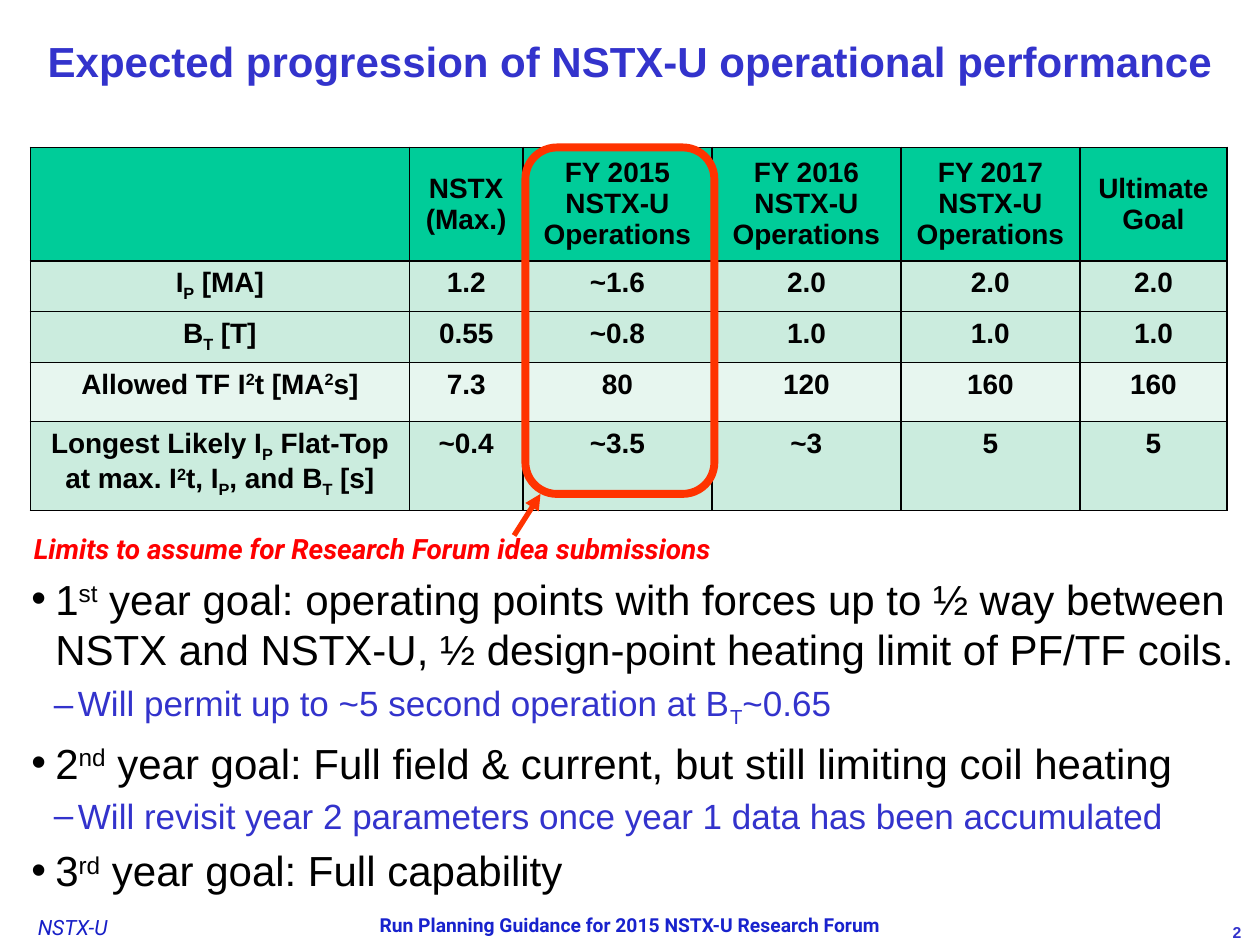
"""Build the slide on expected NSTX-U operational performance."""
from lxml import etree
from pptx import Presentation
from pptx import util as u
from pptx.dml.color import RGBColor
from pptx.enum import shapes, text
from pptx.oxml.ns import qn

COLORS = {
    "black": "000000", "blue": "3333CC", "footer": "171FC7", "running": "1822CD",
    "red": "FF0000", "mark": "FF3300", "header": "00CC99", "band": "CBECDE", "pale": "E7F6EF",
}
SHIFTS = {"^": "30000", "_": "-25000"}
CENTER, RIGHT = text.PP_ALIGN.CENTER, text.PP_ALIGN.RIGHT
MIDDLE, TOP = text.MSO_ANCHOR.MIDDLE, text.MSO_ANCHOR.TOP

TITLE = "Expected progression of NSTX-U operational performance"
COLUMN_WIDTHS = [3.01, 0.9, 1.5, 1.5, 1.42, 1.17]
ROW_HEIGHTS = [0.9, 0.37, 0.37, 0.47, 0.63]
ROW_FILLS = ["header", "band", "band", "pale", "band"]
ROWS = [
    ["", "NSTX\n(Max.)", "FY 2015 NSTX-U\nOperations", "FY 2016\nNSTX-U\nOperations",
     "FY 2017\nNSTX-U Operations", "Ultimate Goal"],
    ["I|_P| [MA]", "1.2", "~1.6", "2.0", "2.0", "2.0"],
    ["B|_T| [T]", "0.55", "~0.8", "1.0", "1.0", "1.0"],
    ["Allowed TF I|^2|t [MA|^2|s]", "7.3", "80", "120", "160", "160"],
    ["Longest Likely I|_P| Flat-Top at max. I|^2|t, I|_P|, and B|_T| [s]",
     "~0.4", "~3.5", "~3", "5", "5"],
]
GOALS = [
    (0, "1|^st| year goal: operating points with forces up to ½ way between NSTX and "
        "NSTX-U, ½ design-point heating limit of PF/TF coils."),
    (1, "Will permit up to ~5 second operation at B|_T|~0.65"),
    (0, "2|^nd| year goal: Full field & current, but still limiting coil heating"),
    (1, "Will revisit year 2 parameters once year 1 data has been accumulated"),
    (0, "3|^rd| year goal: Full capability"),
]
GOAL_LEVELS = [
    {"bullet": "•", "indent": 0.19, "size": 24, "color": "black"},
    {"bullet": "–", "indent": 0.37, "size": 20, "color": "blue"},
]
HANGING = 0.19
LIMITS = "Limits to assume for Research Forum idea submissions"


def rgb(name):
    return RGBColor.from_string(COLORS[name])


def write(paragraph, content, size=16, font="Arial", color="black", bold=False,
          italic=False, align=None, spacing=None):
    """Write text whose |^x| and |_x| parts are raised and lowered."""
    paragraph.alignment = align
    paragraph.line_spacing = spacing
    for part in filter(None, content.split("|")):
        run = paragraph.add_run()
        run.text = part.lstrip("^_")
        run.font.size, run.font.name = u.Pt(size), font
        run.font.bold, run.font.italic = bold, italic
        run.font.color.rgb = rgb(color)
        if part[0] in SHIFTS:
            run._r.get_or_add_rPr().set("baseline", SHIFTS[part[0]])


def add_box(slide, place, inset=None, anchor=TOP, wrap=True):
    frame = slide.shapes.add_textbox(*map(u.Inches, place)).text_frame
    frame.word_wrap, frame.vertical_anchor = wrap, anchor
    if inset is not None:
        frame.margin_left = frame.margin_right = u.Inches(inset)
        frame.margin_top = frame.margin_bottom = u.Inches(inset)
    return frame


def add_label(slide, place, content, inset=None, anchor=TOP, wrap=True, **style):
    write(add_box(slide, place, inset, anchor, wrap).paragraphs[0], content, **style)


def add_borders(cell):
    properties = cell._tc.get_or_add_tcPr()
    for index, side in enumerate(("lnL", "lnR", "lnT", "lnB")):
        border = etree.Element(qn(f"a:{side}"), w=str(u.Pt(1)))
        fill = etree.SubElement(border, qn("a:solidFill"))
        etree.SubElement(fill, qn("a:srgbClr"), val=COLORS["black"])
        properties.insert(index, border)


def add_performance(slide):
    table = slide.shapes.add_table(
        len(ROWS), len(COLUMN_WIDTHS), u.Inches(0.24), u.Inches(1.17),
        u.Inches(sum(COLUMN_WIDTHS)), u.Inches(sum(ROW_HEIGHTS))).table
    table.horz_banding = False
    for column, width in zip(table.columns, COLUMN_WIDTHS):
        column.width = u.Inches(width)
    for r, (row, height, fill) in enumerate(zip(ROWS, ROW_HEIGHTS, ROW_FILLS)):
        table.rows[r].height = u.Inches(height)
        for c, content in enumerate(row):
            cell = table.cell(r, c)
            cell.fill.solid()
            cell.fill.fore_color.rgb = rgb(fill)
            cell.vertical_anchor = TOP if r else MIDDLE
            add_borders(cell)
            for i, line in enumerate(content.split("\n")):
                paragraph = cell.text_frame.add_paragraph() if i else cell.text_frame.paragraphs[0]
                write(paragraph, line, bold=True, align=CENTER)


def add_goals(slide):
    frame = add_box(slide, (0.15, 4.5, 9.75, 2.75))
    for i, (level, content) in enumerate(GOALS):
        look = GOAL_LEVELS[level]
        paragraph = frame.add_paragraph() if i else frame.paragraphs[0]
        paragraph.level = level
        if i:
            paragraph.space_before = u.Pt(look["size"] * 0.2)
        properties = paragraph._p.get_or_add_pPr()
        properties.set("marL", str(u.Inches(look["indent"])))
        properties.set("indent", str(-u.Inches(HANGING)))
        etree.SubElement(properties, qn("a:buFont"), typeface="Arial")
        etree.SubElement(properties, qn("a:buChar"), char=look["bullet"])
        write(paragraph, content, size=look["size"], color=look["color"])


def add_highlight(slide):
    outline = slide.shapes.add_shape(
        shapes.MSO_SHAPE.ROUNDED_RECTANGLE, *map(u.Inches, (4.17, 1.17, 1.5, 2.75)))
    outline.shadow.inherit = False
    outline.fill.background()
    arrow = slide.shapes.add_connector(
        shapes.MSO_CONNECTOR.STRAIGHT, *map(u.Inches, (4.08, 4.25, 4.29, 3.92)))
    for mark, weight in ((outline, 4.5), (arrow, 3)):
        mark.line.color.rgb = rgb("mark")
        mark.line.width = u.Pt(weight)
    etree.SubElement(arrow.line._get_or_add_ln(), qn("a:tailEnd"), type="triangle")
    etree.SubElement(arrow._element.spPr, qn("a:effectLst"))


def main():
    deck = Presentation()
    deck.slide_width, deck.slide_height = u.Inches(10), u.Inches(7.5)
    slide = deck.slides.add_slide(deck.slide_layouts[6])
    add_label(slide, (0.3, 7.26, 0.87, 0.2), "NSTX-U", inset=0, size=12,
              font="Roboto", color="footer", italic=True)
    add_label(slide, (2, 7.2, 6, 0.38), "Run Planning Guidance for 2015 NSTX-U Research Forum",
              size=11, font="Roboto", color="running", bold=True, align=CENTER)
    add_label(slide, (9.12, 7.31, 0.83, 0.17), "2", anchor=MIDDLE, size=9,
              color="blue", bold=True, align=RIGHT)
    add_goals(slide)
    add_performance(slide)
    add_label(slide, (0, 0, 10, 0.97), TITLE, anchor=MIDDLE, size=24, color="blue",
              bold=True, align=CENTER, spacing=u.Pt(28.2))
    add_highlight(slide)
    add_label(slide, (0.17, 4.17, 6.18, 0.37), LIMITS, wrap=False, font="Roboto",
              color="red", bold=True, italic=True)
    deck.save("out.pptx")


if __name__ == "__main__":
    main()
